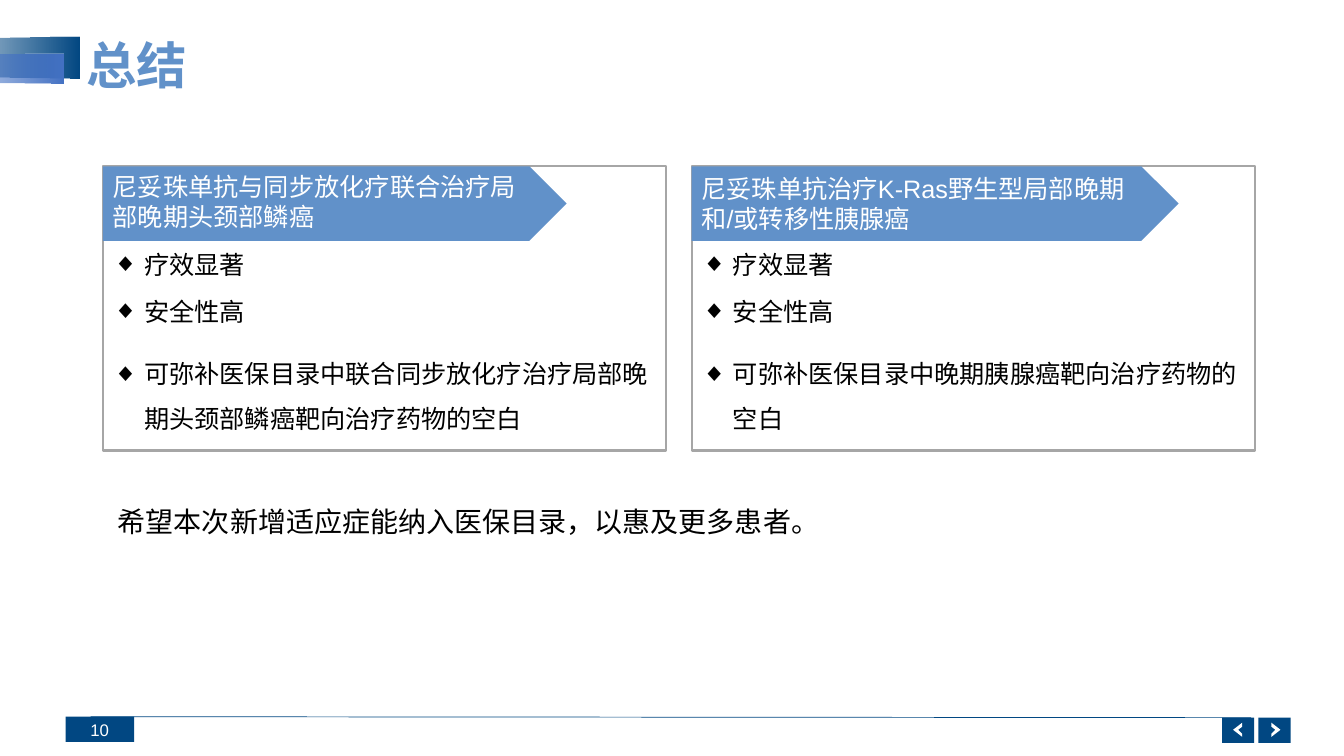
from lxml.etree import SubElement
from pptx import Presentation
from pptx.dml.color import RGBColor
from pptx.enum.shapes import MSO_CONNECTOR, MSO_SHAPE
from pptx.enum.text import MSO_ANCHOR, PP_ALIGN
from pptx.oxml import parse_xml
from pptx.oxml.ns import nsdecls, qn
from pptx.util import Inches, Pt

NAVY, SKY, ROYAL = "014782", "6191C9", "4472C4"
GREY, WHITE, BLACK = "A6A6A6", "FFFFFF", "000000"
FONT = "Arial"

CARD_TOP, CARD_WIDTH, CARD_HEIGHT = 1.65, 5.59, 2.82
BANNER_HEIGHT = 0.74
# Left edge, banner width, banner anchor, banner lines, closing point
CARDS = [
    (1.02, 4.6, MSO_ANCHOR.TOP,
     ["尼妥珠单抗与同步放化疗联合治疗局部晚期头颈部鳞癌"],
     "可弥补医保目录中联合同步放化疗治疗局部晚期头颈部鳞癌靶向治疗药物的空白"),
    (6.86, 4.83, MSO_ANCHOR.MIDDLE,
     ["尼妥珠单抗治疗K-Ras野生型局部晚期", "和/或转移性胰腺癌"],
     "可弥补医保目录中晚期胰腺癌靶向治疗药物的空白"),
]
SHARED_POINTS = ["疗效显著", "安全性高"]


def paint(color_format, hex_color):
    color_format.rgb = RGBColor.from_string(hex_color)


def style_shape(shape, fill, line=None):
    shape.shadow.inherit = False
    shape.fill.solid()
    paint(shape.fill.fore_color, fill)
    if line:
        paint(shape.line.color, line)
        shape.line.width = Pt(1.5)
    else:
        shape.line.fill.background()
    return shape


def add_block(slide, kind, left, top, width, height, fill, line=None):
    block = slide.shapes.add_shape(
        kind, Inches(left), Inches(top), Inches(width), Inches(height))
    return style_shape(block, fill, line)


def write(frame, lines, size, color, anchor=MSO_ANCHOR.TOP,
          align=PP_ALIGN.LEFT, bold=False):
    frame.word_wrap = True
    frame.vertical_anchor = anchor
    for index, line in enumerate(lines):
        paragraph = frame.paragraphs[0] if index == 0 else frame.add_paragraph()
        paragraph.alignment = align
        run = paragraph.add_run()
        run.text = line
        run.font.name, run.font.size, run.font.bold = FONT, Pt(size), bold
        paint(run.font.color, color)


def add_label(slide, left, top, width, height, text, size, color, **layout):
    label = slide.shapes.add_textbox(
        Inches(left), Inches(top), Inches(width), Inches(height))
    write(label.text_frame, [text], size, color, **layout)


def add_bullet(paragraph):
    properties = paragraph._p.get_or_add_pPr()
    properties.set("marL", str(Inches(0.31)))
    properties.set("indent", str(-Inches(0.31)))
    SubElement(properties, qn("a:buFont")).set("typeface", FONT)
    SubElement(properties, qn("a:buChar")).set("char", "◆")


def add_fading_bar(slide, left, top, width, height, color):
    bar = add_block(slide, MSO_SHAPE.TRAPEZOID, left, top, width, height, color)
    bar.adjustments[0] = 0.072
    bar.rotation = 270
    solid = bar._element.spPr.find(qn("a:solidFill"))
    solid.getparent().replace(solid, parse_xml(
        f'<a:gradFill {nsdecls("a")} rotWithShape="1"><a:gsLst>'
        f'<a:gs pos="0"><a:srgbClr val="{color}"><a:alpha val="0"/></a:srgbClr></a:gs>'
        f'<a:gs pos="100000"><a:srgbClr val="{color}"/></a:gs>'
        '</a:gsLst><a:lin ang="5400000" scaled="0"/></a:gradFill>'))


def add_chevron(slide, back, direction):
    """Draw a chevron from its back edge; direction is 1 (right) or -1 (left)."""
    outline = [(0, 7.17), (0, 7.21), (0.04, 7.24), (0, 7.28), (0, 7.31), (0.09, 7.24)]
    points = [(Inches(back + direction * x), Inches(y)) for x, y in outline]
    builder = slide.shapes.build_freeform(*points[0])
    builder.add_line_segments(points[1:], close=True)
    style_shape(builder.convert_to_shape(), WHITE)


def add_footer(slide):
    rule = slide.shapes.add_connector(
        MSO_CONNECTOR.STRAIGHT, Inches(0.9), Inches(7.11), Inches(12.41), Inches(7.12))
    paint(rule.line.color, NAVY)
    rule.line.width = Pt(0.5)
    SubElement(rule._element.spPr, qn("a:effectLst"))
    for left, back, direction in [(12.12, 12.32, -1), (12.48, 12.61, 1)]:
        add_block(slide, MSO_SHAPE.RECTANGLE, left, 7.12, 0.32, 0.25, NAVY)
        add_chevron(slide, back, direction)
    add_block(slide, MSO_SHAPE.RECTANGLE, 0.65, 7.11, 0.68, 0.25, NAVY)
    add_label(slide, 0.6, 7.11, 0.58, 0.26, "10", 12, WHITE,
              anchor=MSO_ANCHOR.MIDDLE, align=PP_ALIGN.RIGHT)


def add_card(slide, left, banner_width, banner_anchor, heading, closing_point):
    card = add_block(slide, MSO_SHAPE.RECTANGLE, left, CARD_TOP,
                     CARD_WIDTH, CARD_HEIGHT, WHITE, GREY)
    points = card.text_frame
    points.margin_top = Inches(0.82)  # Keeps the list below the banner
    write(points, SHARED_POINTS + [closing_point], 18, BLACK)
    for paragraph in points.paragraphs:
        paragraph.space_after = Pt(12)
    points.paragraphs[-1].line_spacing = 1.5
    for paragraph in points.paragraphs:
        add_bullet(paragraph)

    banner = add_block(slide, MSO_SHAPE.PENTAGON, left, CARD_TOP,
                       banner_width, BANNER_HEIGHT, SKY)
    write(banner.text_frame, heading, 18, WHITE, anchor=banner_anchor)


def main():
    deck = Presentation()
    deck.slide_width, deck.slide_height = Inches(13.33), Inches(7.5)
    slide = deck.slides.add_slide(deck.slide_layouts[6])

    # Title with its fading bars
    add_fading_bar(slide, -0.31, -0.32, 0.41, 1.78, NAVY)
    add_fading_bar(slide, -0.29, -0.09, 0.29, 1.54, ROYAL)
    add_label(slide, 0.76, 0.21, 12, 0.85, "总结", 36, SKY,
              anchor=MSO_ANCHOR.MIDDLE, bold=True)

    # Indications and closing wish
    for card in CARDS:
        add_card(slide, *card)
    add_label(slide, 1.07, 4.96, 10.32, 0.44,
              "希望本次新增适应症能纳入医保目录，以惠及更多患者。", 20, BLACK)

    # Page number and navigation
    add_footer(slide)
    deck.save("out.pptx")


main()
